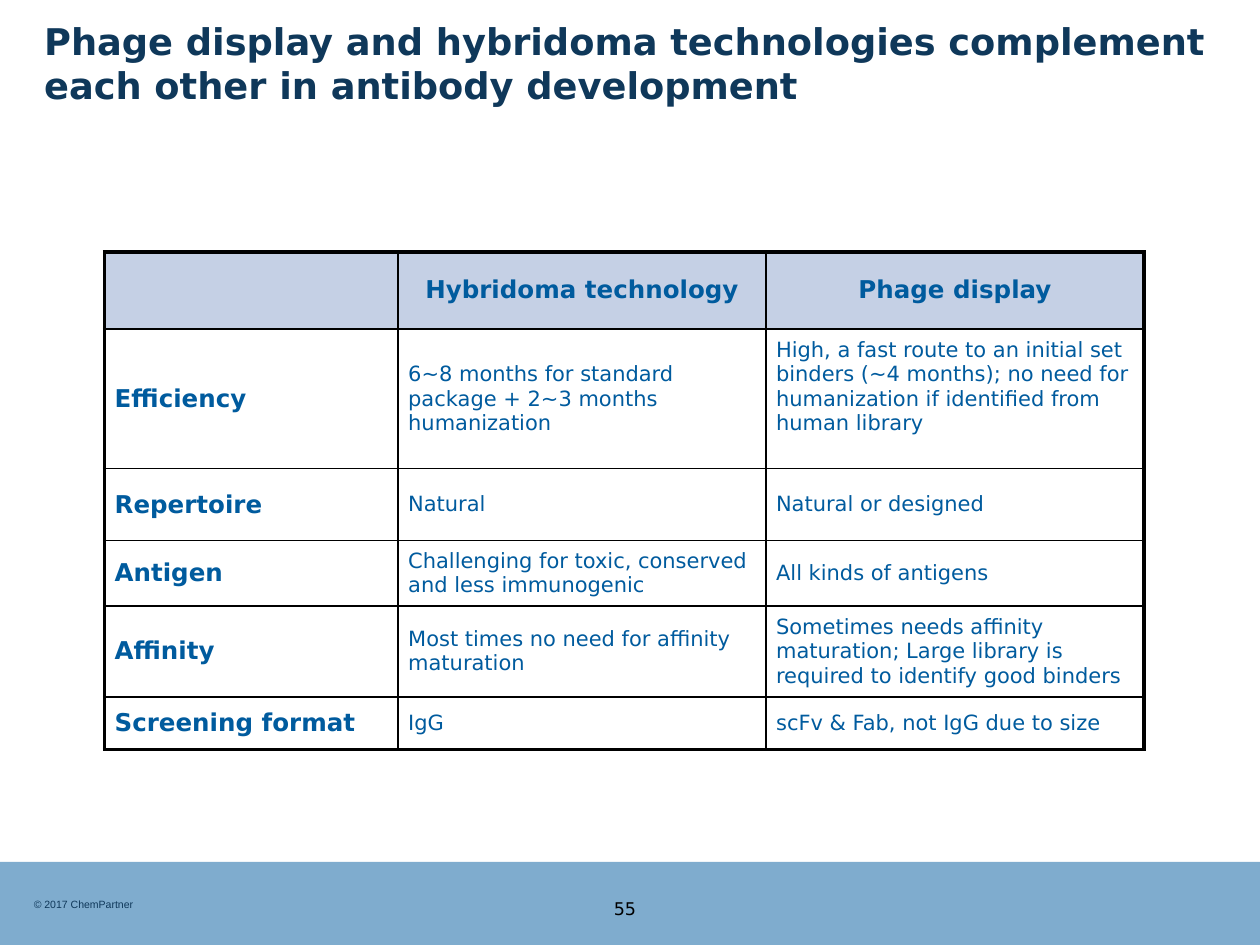
from lxml import etree
from pptx import Presentation
from pptx import util as u
from pptx.dml.color import RGBColor
from pptx.enum import shapes, text
from pptx.oxml import ns

NAVY, BLUE, PALE, BLACK = "0F385A", "005B9E", "C5D0E5", "000000"
COLUMNS, ROWS = 100, 75
THICK, THIN = 2.25, 1


def color(value):
    return RGBColor.from_string(value)


class Deck:
    font = "DejaVu Sans"

    def __init__(self):
        self.presentation = Presentation()
        self.presentation.slide_width = u.Inches(10)
        self.presentation.slide_height = u.Inches(7.5)
        self.slide = self.presentation.slides.add_slide(self.presentation.slide_layouts[5])

    def across(self, columns):
        return round(self.presentation.slide_width * columns / COLUMNS)

    def down(self, rows):
        return round(self.presentation.slide_height * rows / ROWS)

    def area(self, left, top, width, height):
        return self.across(left), self.down(top), self.across(width), self.down(height)

    def set_words(self, frame, words, size, ink, bold=False, align=text.PP_ALIGN.LEFT, font=None):
        frame.text = words
        frame.word_wrap = True
        paragraph = frame.paragraphs[0]
        paragraph.alignment = align
        for run in paragraph.runs:
            run.font.name = font or self.font
            run.font.size = u.Pt(size)
            run.font.bold = bold
            run.font.color.rgb = color(ink)

    def band(self, area, fill, opacity):
        shape = self.slide.shapes.add_shape(shapes.MSO_SHAPE.RECTANGLE, *self.area(*area))
        shape.shadow.inherit = False
        shape.line.fill.background()
        shape.fill.solid()
        shape.fill.fore_color.rgb = color(fill)
        value = shape.fill._xPr.find(".//" + ns.qn("a:srgbClr"))
        etree.SubElement(value, ns.qn("a:alpha"), val=str(opacity * 1000))

    def title(self, area, words):
        shape = self.slide.shapes.title
        shape.left, shape.top, shape.width, shape.height = self.area(*area)
        self.set_words(shape.text_frame, words, 21, NAVY, bold=True)
        shape.text_frame.auto_size = text.MSO_AUTO_SIZE.NONE
        shape.text_frame.vertical_anchor = text.MSO_ANCHOR.MIDDLE

    def label(self, area, words, size, ink, **style):
        shape = self.slide.shapes.add_textbox(*self.area(*area))
        self.set_words(shape.text_frame, words, size, ink, **style)
        shape.text_frame.auto_size = text.MSO_AUTO_SIZE.SHAPE_TO_FIT_TEXT

    def borders(self, cell, widths):
        properties = cell._tc.get_or_add_tcPr()
        for side, width in zip("LRTB", widths):
            line = etree.SubElement(properties, ns.qn("a:ln" + side), w=str(u.Pt(width)))
            fill = etree.SubElement(line, ns.qn("a:solidFill"))
            etree.SubElement(fill, ns.qn("a:srgbClr"), val=BLACK)

    def table(self, left, top, widths, heights, content):
        area = self.area(left, top, sum(widths), sum(heights))
        table = self.slide.shapes.add_table(len(heights), len(widths), *area).table
        table.horz_banding = False
        table.first_row = False
        for column, width in zip(table.columns, widths):
            column.width = self.across(width)
        for row, height in zip(table.rows, heights):
            row.height = self.down(height)
        last_row, last_column = len(heights) - 1, len(widths) - 1
        for r, words_in_row in enumerate(content):
            for c, words in enumerate(words_in_row):
                cell = table.cell(r, c)
                edges = (c == 0, c == last_column, r == 0, r == last_row)
                self.borders(cell, [THICK if edge else THIN for edge in edges])
                if r == 0:
                    cell.fill.solid()
                    cell.fill.fore_color.rgb = color(PALE)
                else:
                    cell.fill.background()
                cell.margin_left = cell.margin_right = u.Inches(0.08)
                cell.margin_top = cell.margin_bottom = u.Inches(0.06)
                cell.vertical_anchor = text.MSO_ANCHOR.MIDDLE
                heading = r == 0 or c == 0
                align = text.PP_ALIGN.CENTER if r == 0 else text.PP_ALIGN.LEFT
                self.set_words(cell.text_frame, words, 14 if heading else 12, BLUE, heading, align)
        return table


def main():
    deck = Deck()
    deck.band((0, 68.4, COLUMNS, 6.6), BLUE, 50)
    deck.label((1.7, 70.8, 50, 2), "© 2017 ChemPartner", 6, NAVY, font="Arial")
    deck.label((44.3, 70.8, 10.6, 2.8), "55", 10, BLACK, align=text.PP_ALIGN.CENTER)
    deck.title(
        (2.5, 0, 94.2, 10),
        "Phage display and hybridoma technologies complement each other in antibody development",
    )
    comparison = deck.table(8.3, 20, (23.3, 29.2, 30), (6.1, 10.9, 5.7, 5.1, 7, 4.2), [
        ("", "Hybridoma technology", "Phage display"),
        ("Efficiency", "6~8 months for standard package + 2~3 months humanization",
         "High, a fast route to an initial set binders (~4 months); no need for "
         "humanization if identified from human library"),
        ("Repertoire", "Natural", "Natural or designed"),
        ("Antigen", "Challenging for toxic, conserved and less immunogenic",
         "All kinds of antigens"),
        ("Affinity", "Most times no need for affinity maturation",
         "Sometimes needs affinity maturation; Large library is required to identify good binders"),
        ("Screening format", "IgG", "scFv & Fab, not IgG due to size"),
    ])
    comparison.cell(1, 2).margin_bottom = u.Inches(0.25)
    deck.presentation.save("out.pptx")


if __name__ == "__main__":
    main()
